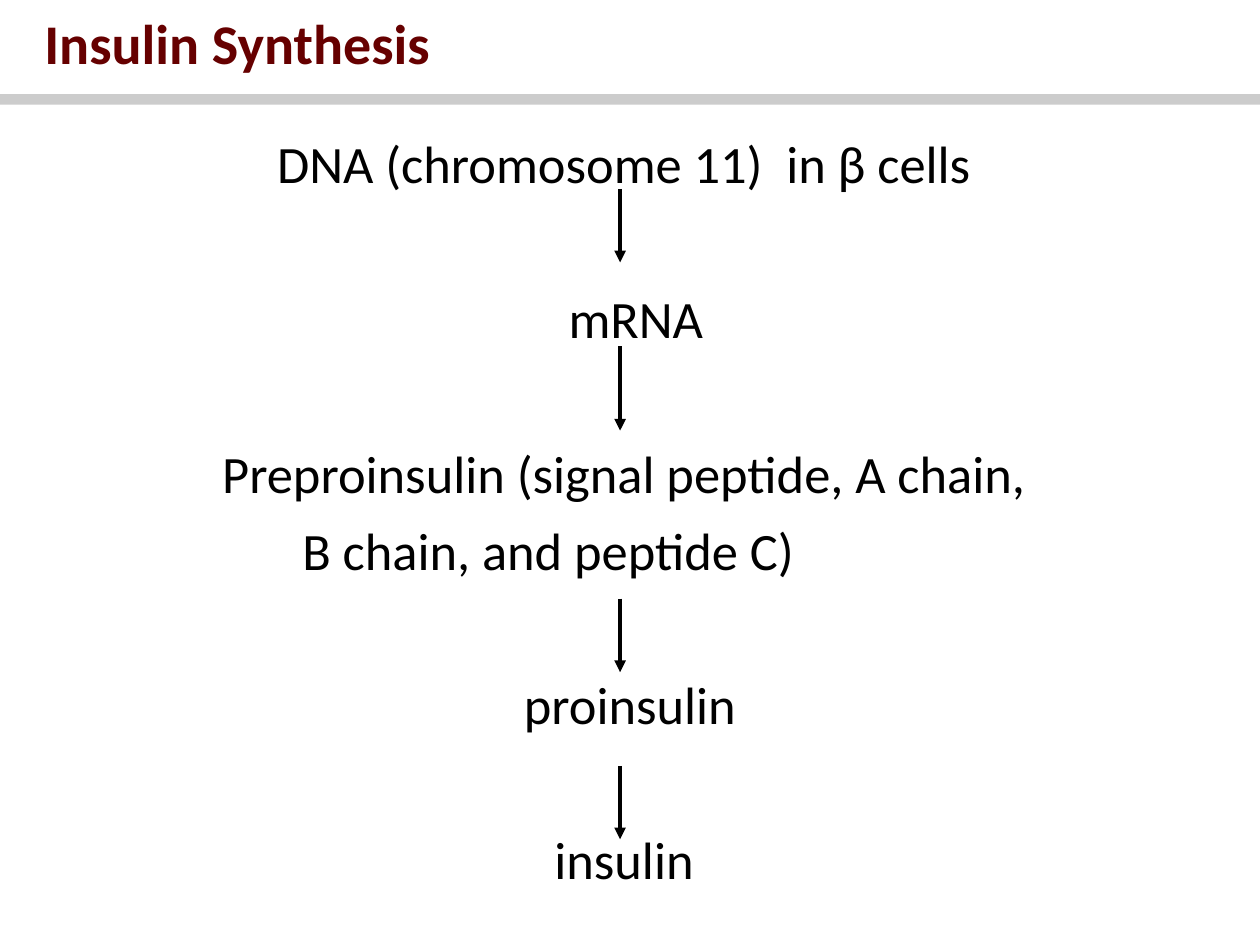
from collections import namedtuple

from lxml.etree import SubElement
from pptx import Presentation
from pptx.dml.color import RGBColor
from pptx.enum.shapes import MSO_CONNECTOR, MSO_SHAPE
from pptx.enum.text import MSO_ANCHOR, MSO_AUTO_SIZE, PP_ALIGN
from pptx.oxml.ns import qn
from pptx.util import Cm, Pt

Box = namedtuple("Box", "left top width height")

TITLE_BOX = Box(0.64, 0.2, 24.33, 1.48)
RULE_BOX = Box(0, 1.9, 25.4, 0.21)
BODY_BOX = Box(1.27, 2.26, 22.86, 16.23)

LINE_GAP = 11.5
STEP_GAP = 56
STEPS = [
    ("DNA (chromosome 11)  in β cells ", 0),
    (" mRNA", STEP_GAP),
    ("Preproinsulin (signal peptide, A chain, ", STEP_GAP),
    ("B chain, and peptide C)", LINE_GAP),
    ("proinsulin", STEP_GAP),
    ("insulin ", STEP_GAP),
]
CONTINUATION = 3
CONTINUATION_INDENT = 4.57
ARROW_X = 11.23
ARROWS = [(1.55, 1.48), (4.72, 1.7), (9.81, 1.48), (13.18, 1.48)]


def color(value):
    return RGBColor.from_string(value)


def apply(target, formats):
    for name, value in formats.items():
        setattr(target, name, value)


def place(shape, box):
    apply(shape, {name: Cm(value) for name, value in box._asdict().items()})


def prepare_frame(shape, box):
    place(shape, box)
    frame = shape.text_frame
    apply(frame, {"word_wrap": True, "auto_size": MSO_AUTO_SIZE.NONE,
                  "vertical_anchor": MSO_ANCHOR.MIDDLE})
    return frame


def write(para, text, size, shade, bold, **formats):
    span = para.add_run()
    span.text = text
    apply(span.font, {"name": "Calibri", "size": Pt(size), "bold": bold})
    span.font.color.rgb = color(shade)
    apply(para, {"line_spacing": 0.9, **formats})


def add_title(page, box):
    frame = prepare_frame(page.shapes.title, box)
    write(frame.paragraphs[0], "Insulin Synthesis", 32, "660000", True,
          alignment=PP_ALIGN.LEFT)


def add_rule(page, box):
    rule = page.shapes.add_shape(MSO_SHAPE.RECTANGLE, 0, 0, 0, 0)
    place(rule, box)
    rule.shadow.inherit = False
    rule.fill.solid()
    rule.fill.fore_color.rgb = color("CCCCCC")
    rule.line.fill.background()


def add_steps(page, box):
    frame = prepare_frame(page.placeholders[1], box)
    for index, (text, gap) in enumerate(STEPS):
        para = frame.add_paragraph() if index else frame.paragraphs[0]
        continued = index == CONTINUATION
        write(para, text, 30, "000000", False, space_before=Pt(gap),
              alignment=PP_ALIGN.LEFT if continued else PP_ALIGN.CENTER)
        properties = para._p.get_or_add_pPr()
        properties.set("marL", str(Cm(CONTINUATION_INDENT if continued else 0)))
        properties.set("indent", "0")
        SubElement(properties, qn("a:buNone"))


def add_arrows(page, box):
    x = Cm(box.left + ARROW_X)
    for top, length in ARROWS:
        start = box.top + top
        arrow = page.shapes.add_connector(
            MSO_CONNECTOR.STRAIGHT, x, Cm(start), x, Cm(start + length))
        arrow.line.width = Pt(2.25)
        arrow.line.color.rgb = color("000000")
        SubElement(arrow.line._get_or_add_ln(), qn("a:tailEnd"), type="triangle")
        SubElement(arrow._element.spPr, qn("a:effectLst"))


def main():
    deck = Presentation()
    apply(deck, {"slide_width": Cm(25.4), "slide_height": Cm(19.05)})
    page = deck.slides.add_slide(deck.slide_layouts[1])
    add_rule(page, RULE_BOX)
    add_steps(page, BODY_BOX)
    add_arrows(page, BODY_BOX)
    add_title(page, TITLE_BOX)
    deck.save("out.pptx")


if __name__ == "__main__":
    main()
